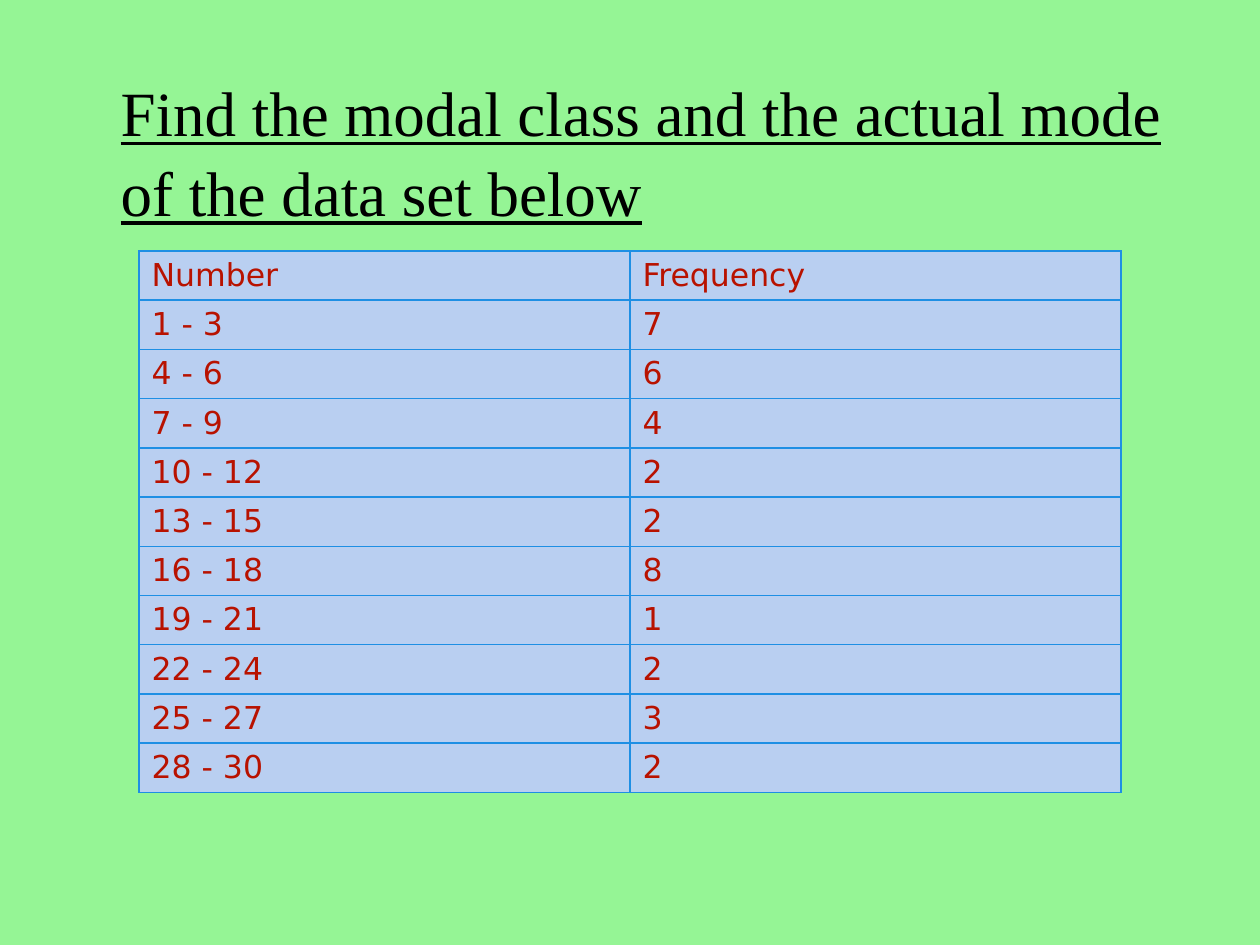
from lxml import etree
from pptx import Presentation
from pptx.dml.color import RGBColor
from pptx.enum.text import MSO_ANCHOR, MSO_AUTO_SIZE, PP_ALIGN
from pptx.oxml.ns import qn
from pptx.util import Pt

TITLE = "Find the modal class and the actual mode of the data set below"
HEADER = ("Number", "Frequency")
FREQUENCIES = (7, 6, 4, 2, 2, 8, 1, 2, 3, 2)
CLASS_WIDTH = 3

COLORS = {
    "background": "95F595",
    "title": "000000",
    "cell": "B9CFF1",
    "cell_text": "B81200",
    "border": "1E8FE4",
}
TITLE_FONT = {"name": "Times New Roman", "size": Pt(36), "bold": False, "underline": True}
CELL_FONT = {"name": "DejaVu Sans", "size": Pt(18), "bold": False}

PX = 914400 // 126
SLIDE_SIZE = (1260, 945)
TITLE_BOX = (108, 32, 1082, 203)
TABLE_LEFT, TABLE_TOP = 139, 251
COLUMN_WIDTH, ROW_HEIGHT = 491, 49
BORDER_WIDTH = Pt(1)


def color(name):
    return RGBColor.from_string(COLORS[name])


def format_font(font, values, color_name):
    for attribute, value in values.items():
        setattr(font, attribute, value)
    font.color.rgb = color(color_name)


def add_borders(cell):
    properties = cell._tc.get_or_add_tcPr()
    for index, side in enumerate(("lnL", "lnR", "lnT", "lnB")):
        line = etree.Element(qn(f"a:{side}"), w=str(BORDER_WIDTH))
        fill = etree.SubElement(line, qn("a:solidFill"))
        etree.SubElement(fill, qn("a:srgbClr"), val=COLORS["border"])
        properties.insert(index, line)  # borders come before the cell fill


def add_title(slide):
    title = slide.shapes.title
    title.left, title.top, title.width, title.height = (n * PX for n in TITLE_BOX)
    frame = title.text_frame
    frame.text = TITLE
    frame.word_wrap = True
    frame.auto_size = MSO_AUTO_SIZE.NONE
    frame.vertical_anchor = MSO_ANCHOR.BOTTOM
    paragraph = frame.paragraphs[0]
    paragraph.alignment = PP_ALIGN.LEFT
    paragraph.line_spacing = 1.05
    format_font(paragraph.runs[0].font, TITLE_FONT, "title")


def add_frequency_table(slide):
    rows = [HEADER]
    for index, frequency in enumerate(FREQUENCIES):
        first = index * CLASS_WIDTH + 1
        rows.append((f"{first} - {first + CLASS_WIDTH - 1}", str(frequency)))

    table = slide.shapes.add_table(
        len(rows), len(HEADER), TABLE_LEFT * PX, TABLE_TOP * PX,
        len(HEADER) * COLUMN_WIDTH * PX, len(rows) * ROW_HEIGHT * PX,
    ).table
    table.horz_banding = False
    for row, texts in zip(table.rows, rows):
        for cell, text in zip(row.cells, texts):
            cell.text = text
            cell.vertical_anchor = MSO_ANCHOR.MIDDLE
            cell.fill.solid()
            cell.fill.fore_color.rgb = color("cell")
            add_borders(cell)
            format_font(cell.text_frame.paragraphs[0].runs[0].font, CELL_FONT, "cell_text")


def main():
    presentation = Presentation()
    presentation.slide_width, presentation.slide_height = (n * PX for n in SLIDE_SIZE)
    slide = presentation.slides.add_slide(presentation.slide_layouts[0])
    slide.background.fill.solid()
    slide.background.fill.fore_color.rgb = color("background")
    subtitle = slide.placeholders[1].element
    subtitle.getparent().remove(subtitle)
    add_title(slide)
    add_frequency_table(slide)
    presentation.save("out.pptx")


if __name__ == "__main__":
    main()
